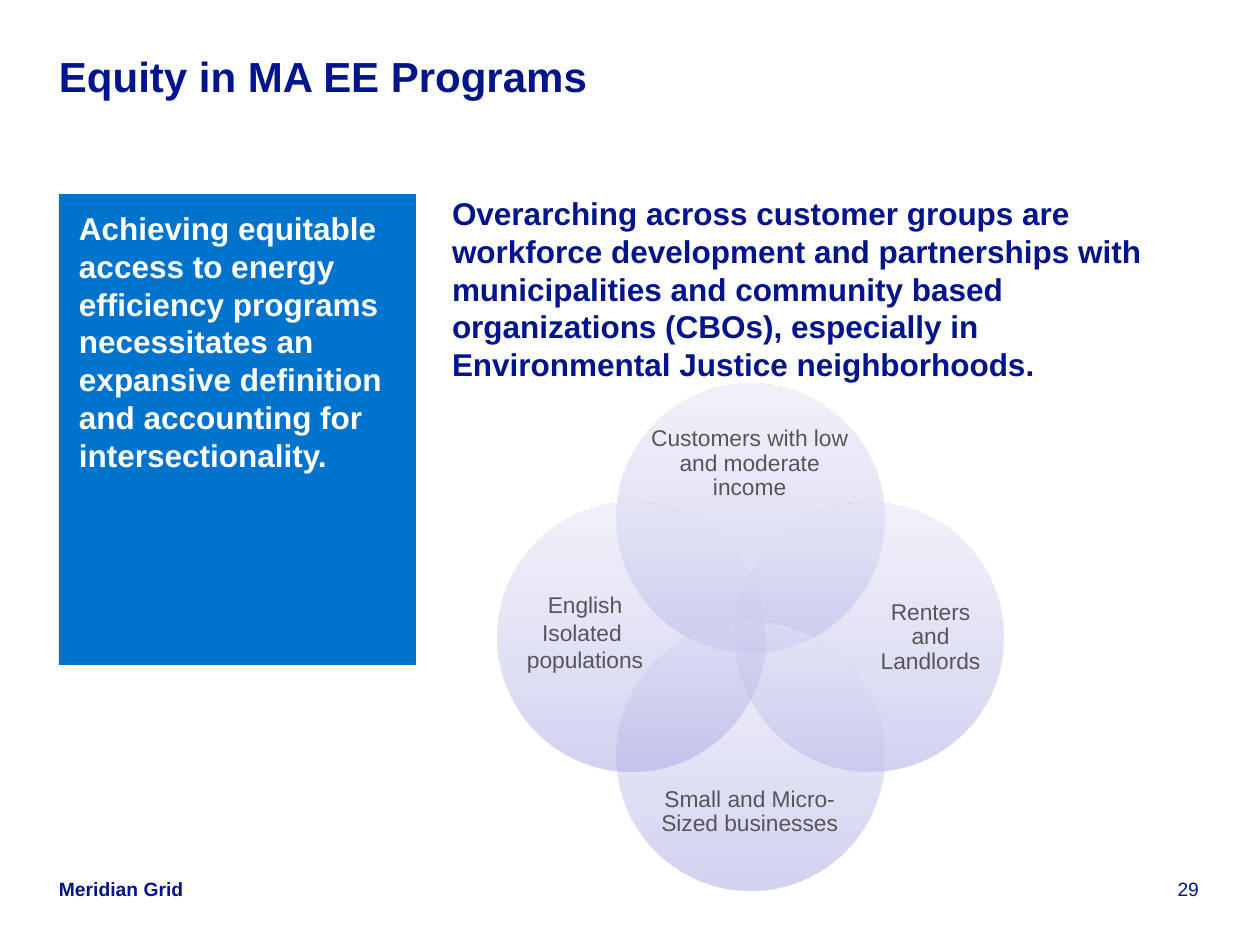
import pptx
import pptx.util
import pptx.dml.color
import pptx.enum.shapes
import pptx.enum.text
import pptx.oxml

Shape = pptx.enum.shapes.MSO_SHAPE
Align = pptx.enum.text.PP_ALIGN
Anchor = pptx.enum.text.MSO_ANCHOR

HUES = {"navy": "00148C", "blue": "0073CD", "white": "FFFFFF", "gray": "55555A"}
STOPS = {0: "A5A5E4", 35: "C0C0EB", 100: "E6E6F8"}
SCALE = pptx.util.Inches(1) / 126
MID = (750, 637)
SIZE = 268
STEP = 119


def emu(*px):
    return [round(n * SCALE) for n in px]


def write(shape, text, size=18, hue="navy", bold=False, align=Align.LEFT,
          anchor=Anchor.TOP, inset=(0, 0), space=1.0):
    frame = shape.text_frame
    frame.word_wrap = True
    frame.auto_size = pptx.enum.text.MSO_AUTO_SIZE.NONE
    frame.vertical_anchor = anchor
    side, end = emu(*inset)
    frame.margin_left = frame.margin_right = side
    frame.margin_top = frame.margin_bottom = end
    frame.text = text
    for para in frame.paragraphs:
        para.alignment = align
        para.line_spacing = space
        for run in para.runs:
            font = run.font
            font.name = "Arial"
            font.size = pptx.util.Pt(size)
            font.bold = bold
            font.color.rgb = pptx.dml.color.RGBColor.from_string(HUES[hue])


class Page:
    def __init__(self, deck):
        self.slide = deck.slides.add_slide(deck.slide_layouts[5])
        self.shapes = self.slide.shapes

    def title(self, text, box):
        shape = self.shapes.title
        shape.left, shape.top, shape.width, shape.height = emu(*box)
        write(shape, text, size=24, bold=True)

    def label(self, text, box, **style):
        write(self.shapes.add_textbox(*emu(*box)), text, **style)

    def panel(self, text, box, fill, **style):
        shape = self.shapes.add_shape(Shape.RECTANGLE, *emu(*box))
        shape.shadow.inherit = False
        shape.fill.solid()
        shape.fill.fore_color.rgb = pptx.dml.color.RGBColor.from_string(HUES[fill])
        shape.line.fill.background()
        write(shape, text, **style)

    def circle(self, across, down):
        left = MID[0] + across * STEP - SIZE // 2
        top = MID[1] + down * STEP - SIZE // 2
        shape = self.shapes.add_shape(Shape.OVAL, *emu(left, top, SIZE, SIZE))
        shape.shadow.inherit = False
        shape.line.fill.background()
        shape.fill.gradient()
        shape.fill.gradient_angle = 90
        stops = shape.fill.gradient_stops[0]._gs.getparent()
        for stop in list(stops):
            stops.remove(stop)
        space = "http://schemas.openxmlformats.org/drawingml/2006/main"
        for place, hue in STOPS.items():
            stops.append(pptx.oxml.parse_xml(
                f'<a:gs xmlns:a="{space}" pos="{place * 1000}">'
                f'<a:srgbClr val="{hue}"><a:alpha val="50000"/></a:srgbClr></a:gs>'))


def main():
    deck = pptx.Presentation()
    deck.slide_width, deck.slide_height = emu(1260, 945)
    page = Page(deck)

    page.label("29", (1126, 876, 73, 24), size=11, align=Align.RIGHT,
               anchor=Anchor.BOTTOM)
    page.label("Meridian Grid", (59, 876, 126, 24), size=11, bold=True,
               anchor=Anchor.BOTTOM)
    page.panel("Achieving equitable access to energy efficiency programs "
               "necessitates an expansive definition and accounting for "
               "intersectionality.", (59, 194, 357, 471), "blue",
               hue="white", bold=True, inset=(20, 15))
    page.title("Equity in MA EE Programs", (59, 50, 1142, 50))
    page.label("Overarching across customer groups are workforce development "
               "and partnerships with municipalities and community based "
               "organizations (CBOs), especially in Environmental Justice "
               "neighborhoods.", (452, 194, 747, 190), bold=True)

    small = {"size": 13, "hue": "gray", "align": Align.CENTER}
    tight = {**small, "anchor": Anchor.MIDDLE, "space": 0.9}
    open_ = {**small, "inset": (13, 6)}
    groups = [
        (0, -1, "Customers with low and moderate income", (646, 421, 207, 86), tight),
        (1, 0, "Renters and Landlords", (879, 534, 103, 207), tight),
        (0, 1, "Small and Micro-Sized businesses", (646, 769, 207, 86), tight),
        (-1, 0, "English\nIsolated \npopulations", (513, 585, 144, 96), open_),
    ]
    for across, down, text, box, style in groups:
        page.circle(across, down)
        page.label(text, box, **style)

    deck.save("out.pptx")


if __name__ == "__main__":
    main()
